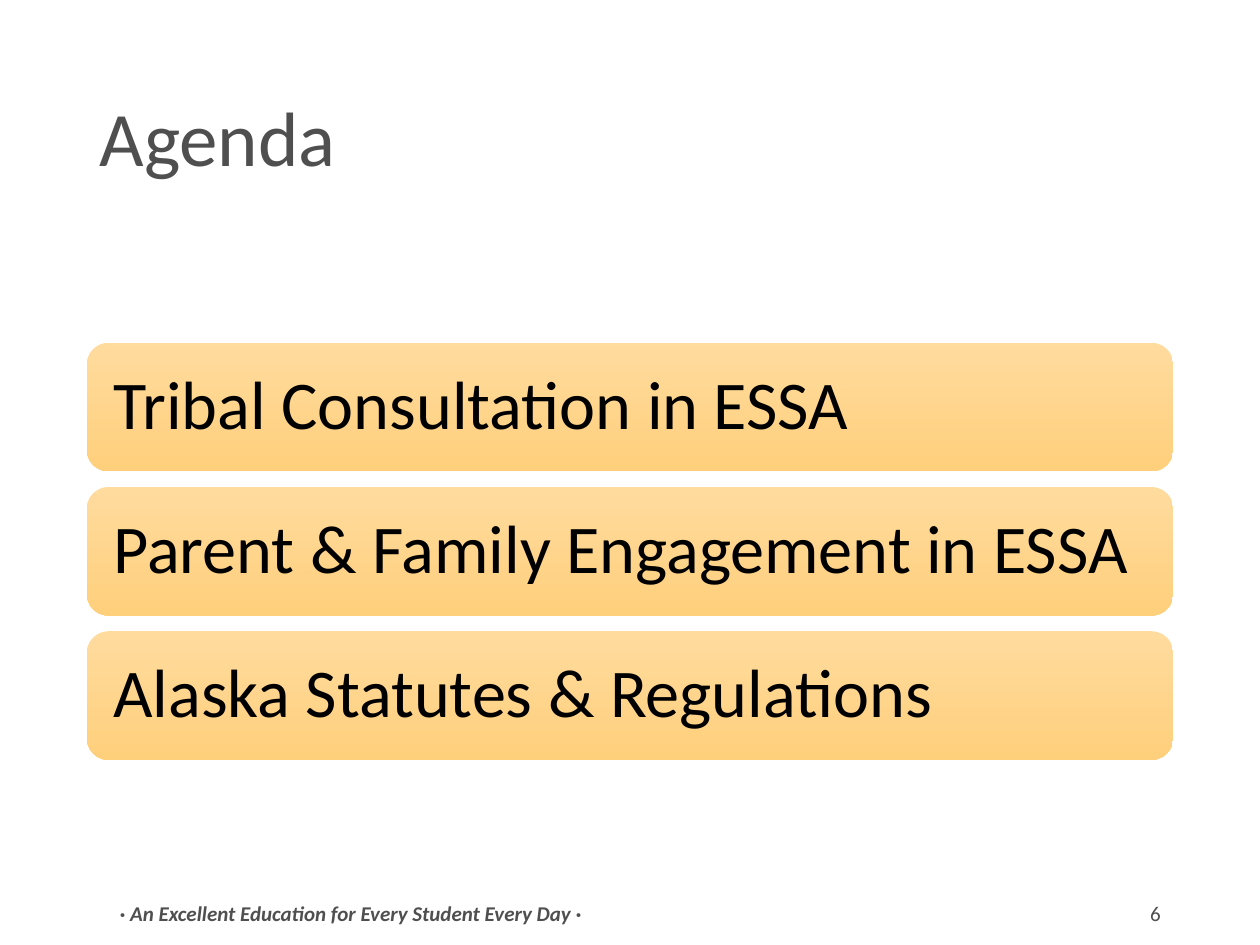
from pptx import Presentation
from pptx.dml.color import RGBColor
from pptx.enum.shapes import MSO_SHAPE
from pptx.enum.text import MSO_ANCHOR as ANCHOR, PP_ALIGN as ALIGN
from pptx.util import Inches, Pt

GRAY = "4F4F4F"


def rgb(color):
    return RGBColor.from_string(color)


def set_text(sp, text, size, color, align, anchor):
    tf = sp.text_frame
    tf.text = text
    tf.word_wrap = True
    tf.vertical_anchor = anchor
    p = tf.paragraphs[0]
    p.alignment = align
    r = p.runs[0]
    r.font.name = "Calibri"
    r.font.size = Pt(size)
    r.font.color.rgb = rgb(color)
    return p


prs = Presentation()
prs.slide_width, prs.slide_height = Inches(10), Inches(7.5)
s = prs.slides.add_slide(prs.slide_layouts[5])

title = s.shapes.title
title.left, title.top = Inches(0.69), Inches(0.4)
title.width, title.height = Inches(8.62), Inches(1.45)
p = set_text(title, "Agenda", 44, GRAY, ALIGN.LEFT, ANCHOR.MIDDLE)
p.line_spacing = 0.9

# Agenda bars
topics = [
    "Tribal Consultation in ESSA",
    "Parent & Family Engagement in ESSA",
    "Alaska Statutes & Regulations",
]
for i, topic in enumerate(topics):
    bar = s.shapes.add_shape(MSO_SHAPE.ROUNDED_RECTANGLE, Inches(0.69),
                             Inches(2.72 + i * 1.145), Inches(8.62), Inches(1.02))
    bar.shadow.inherit = False
    bar.line.fill.background()
    bar.fill.gradient()
    bar.fill.gradient_angle = 270
    for stop, color in zip(bar.fill.gradient_stops, ("FFDB9E", "FFD07C")):
        stop.color.rgb = rgb(color)
    tf = bar.text_frame
    tf.margin_left = tf.margin_right = tf.margin_top = tf.margin_bottom = Inches(0.16)
    p = set_text(bar, topic, 39, "000000", ALIGN.LEFT, ANCHOR.MIDDLE)
    p.line_spacing = 0.9

# Footer
number = s.shapes.add_textbox(Inches(7.06), Inches(7), Inches(2.25), Inches(0.4))
set_text(number, "6", 12, GRAY, ALIGN.RIGHT, ANCHOR.BOTTOM)

motto = s.shapes.add_textbox(Inches(0.82), Inches(7), Inches(3.93), Inches(0.4))
p = set_text(motto, "· An Excellent Education for Every Student Every Day ·",
             12, GRAY, ALIGN.CENTER, ANCHOR.BOTTOM)
p.runs[0].font.bold = p.runs[0].font.italic = True

prs.save("out.pptx")
